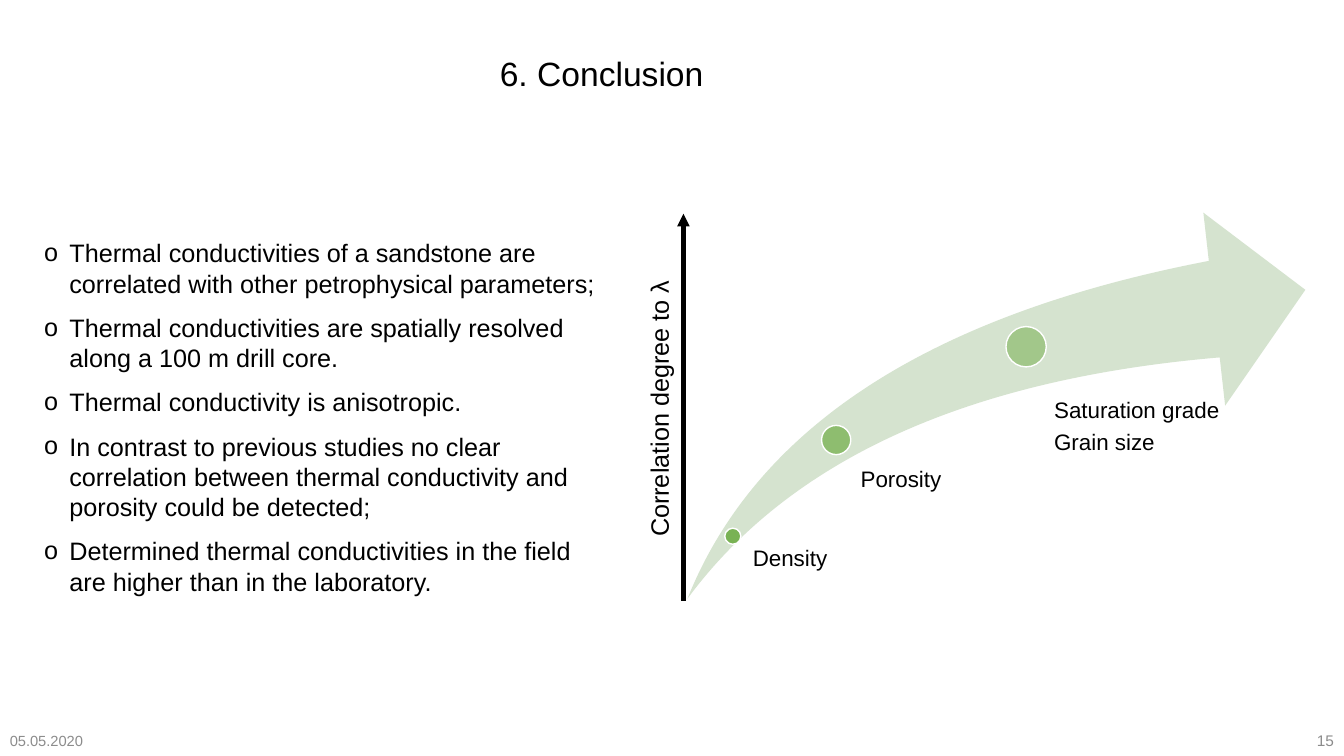
"""Build the conclusion slide; lengths count columns and rows of a 0.1 inch grid."""
from dataclasses import dataclass

import lxml.etree
import pptx
import pptx.dml.color
import pptx.enum.shapes
import pptx.enum.text
import pptx.oxml.ns
import pptx.util

COLS, ROWS = 133.33, 75
FONT = "Arial"
BLACK, GREY, WHITE, GREEN, PALE = "000000", "8C8C8C", "FFFFFF", "70AD47", "D5E3CF"
SHAPE = pptx.enum.shapes.MSO_SHAPE
ALIGN = pptx.enum.text.PP_ALIGN
ANCHOR = pptx.enum.text.MSO_ANCHOR


@dataclass(frozen=True)
class Box:
    """Area on the grid."""
    col: float
    row: float
    cols: float
    rows: float

    def emu(self) -> list[int]:
        """Return left, top, width and height."""
        return [cell(n) for n in (self.col, self.row, self.cols, self.rows)]


@dataclass(frozen=True)
class Text:
    """Text lines and their format."""
    box: Box
    lines: tuple[str, ...]
    size: float
    color: str = BLACK
    align: ALIGN = ALIGN.LEFT
    anchor: ANCHOR = ANCHOR.MIDDLE
    gap: float = 0
    spacing: float = 1.0
    rotation: float = 0
    bullet: str = ""


@dataclass(frozen=True)
class Marker:
    """Circle on the arrow with its label."""
    col: float
    row: float
    diameter: float
    opacity: int
    label_col: float
    label_row: float
    label: tuple[str, ...]


TEXTS = (
    Text(Box(0, 71.5, 30, 4), ("05.05.2020",), 10.5, GREY),
    Text(Box(COLS - 30, 71.5, 30, 4), ("15",), 11, GREY, ALIGN.RIGHT),
    Text(Box(48.6, 1.2, 79.9, 12.1), ("6. Conclusion",), 24),
    Text(Box(3.4, 23.1, 57.5, 41.7), (
        "Thermal conductivities of a sandstone are correlated with other petrophysical parameters;",
        "Thermal conductivities are spatially resolved along a 100 m drill core.",
        "Thermal conductivity is anisotropic.",
        "In contrast to previous studies no clear correlation between thermal conductivity and "
        "porosity could be detected;",
        "Determined thermal conductivities in the field are higher than in the laboratory.",
    ), 18, anchor=ANCHOR.TOP, gap=10, bullet="o"),
    Text(Box(50.8, 37.7, 29.1, 4), ("Correlation degree to λ",), 18, rotation=270),
)
MARKERS = (
    Marker(72.7, 53.2, 1.6, 90, 73.7, 53.8, ("Density",)),
    Marker(82.95, 43.65, 2.9, 70, 84.4, 46, ("Porosity",)),
    Marker(101.8, 34.4, 4, 50, 103.6, 39.1, ("Saturation grade", "Grain size")),
)
SWOOSH = Box(68.2, 21.1, 61.3, 38.3)
AXIS_COL, AXIS_BOTTOM, AXIS_TOP = 67.8, 59.6, 21.2


def cell(n: float) -> int:
    """Convert grid cells to EMU."""
    return pptx.util.Inches(n / 10)


def rgb(color: str) -> pptx.dml.color.RGBColor:
    """Convert a hex string to a colour."""
    return pptx.dml.color.RGBColor.from_string(color)


def sub(parent, tag: str, **attrs: str):
    """Append a namespaced child element."""
    return lxml.etree.SubElement(parent, pptx.oxml.ns.qn(tag), attrs)


def add_text(s, text: Text) -> None:
    """Draw a text box."""
    sp = s.shapes.add_textbox(*text.box.emu())
    sp.rotation = text.rotation
    tf = sp.text_frame
    tf.word_wrap = True
    tf.vertical_anchor = text.anchor
    tf.text = "\n".join(text.lines)
    for i, p in enumerate(tf.paragraphs):
        if text.bullet:
            indent = cell(2.5)
            pr = p._p.get_or_add_pPr()
            pr.set("marL", str(indent))
            pr.set("indent", str(-indent))
            sub(pr, "a:buFont", typeface=FONT)
            sub(pr, "a:buChar", char=text.bullet)
        p.alignment = text.align
        p.line_spacing = text.spacing
        p.space_before = pptx.util.Pt(text.gap if i else 0)
        for r in p.runs:
            r.font.name = FONT
            r.font.size = pptx.util.Pt(text.size)
            r.font.color.rgb = rgb(text.color)


def add_shape(s, kind: SHAPE, box: Box, fill: str):
    """Draw a filled shape without outline."""
    sp = s.shapes.add_shape(kind, *box.emu())
    sp.shadow.inherit = False
    sp.fill.solid()
    sp.fill.fore_color.rgb = rgb(fill)
    sp.line.fill.background()
    return sp


def add_marker(s, m: Marker) -> None:
    """Draw a translucent circle and its label."""
    d = m.diameter
    sp = add_shape(s, SHAPE.OVAL, Box(m.col - d / 2, m.row - d / 2, d, d), GREEN)
    color = sp.fill._xPr.find(".//" + pptx.oxml.ns.qn("a:srgbClr"))
    sub(color, "a:alpha", val=str(m.opacity * 1000))
    sp.line.color.rgb = rgb(WHITE)
    sp.line.width = pptx.util.Pt(1)
    box = Box(m.label_col, m.label_row, 23, 4 * len(m.label))
    add_text(s, Text(box, m.label, 16, anchor=ANCHOR.TOP, gap=5.6, spacing=0.9))


def add_axis(s) -> None:
    """Draw the vertical axis arrow."""
    sp = s.shapes.add_connector(
        pptx.enum.shapes.MSO_CONNECTOR.STRAIGHT,
        cell(AXIS_COL), cell(AXIS_BOTTOM), cell(AXIS_COL), cell(AXIS_TOP))
    sp.line.color.rgb = rgb(BLACK)
    sp.line.width = pptx.util.Pt(3)
    sub(sp.line._get_or_add_ln(), "a:tailEnd", type="triangle")
    sub(sp._element.spPr, "a:effectLst")


def main() -> None:
    """Build and save the slide."""
    prs = pptx.Presentation()
    prs.slide_width, prs.slide_height = cell(COLS), cell(ROWS)
    s = prs.slides.add_slide(prs.slide_layouts[6])
    swoosh = add_shape(s, SHAPE.SWOOSH_ARROW, SWOOSH, PALE)
    swoosh.adjustments[0] = swoosh.adjustments[1] = 0.25
    for marker in MARKERS:
        add_marker(s, marker)
    add_axis(s)
    for text in TEXTS:
        add_text(s, text)
    prs.save("out.pptx")


if __name__ == "__main__":
    main()
